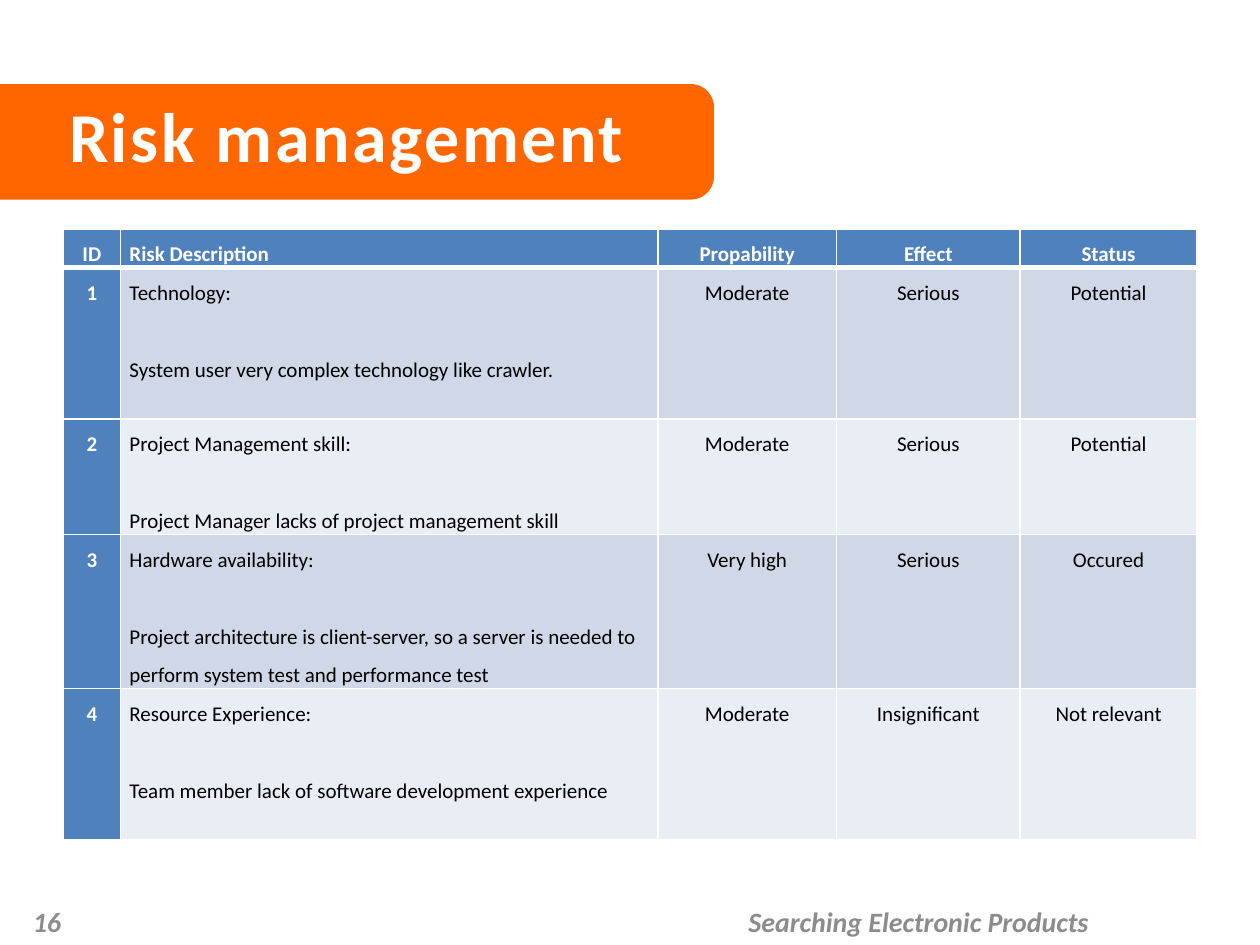
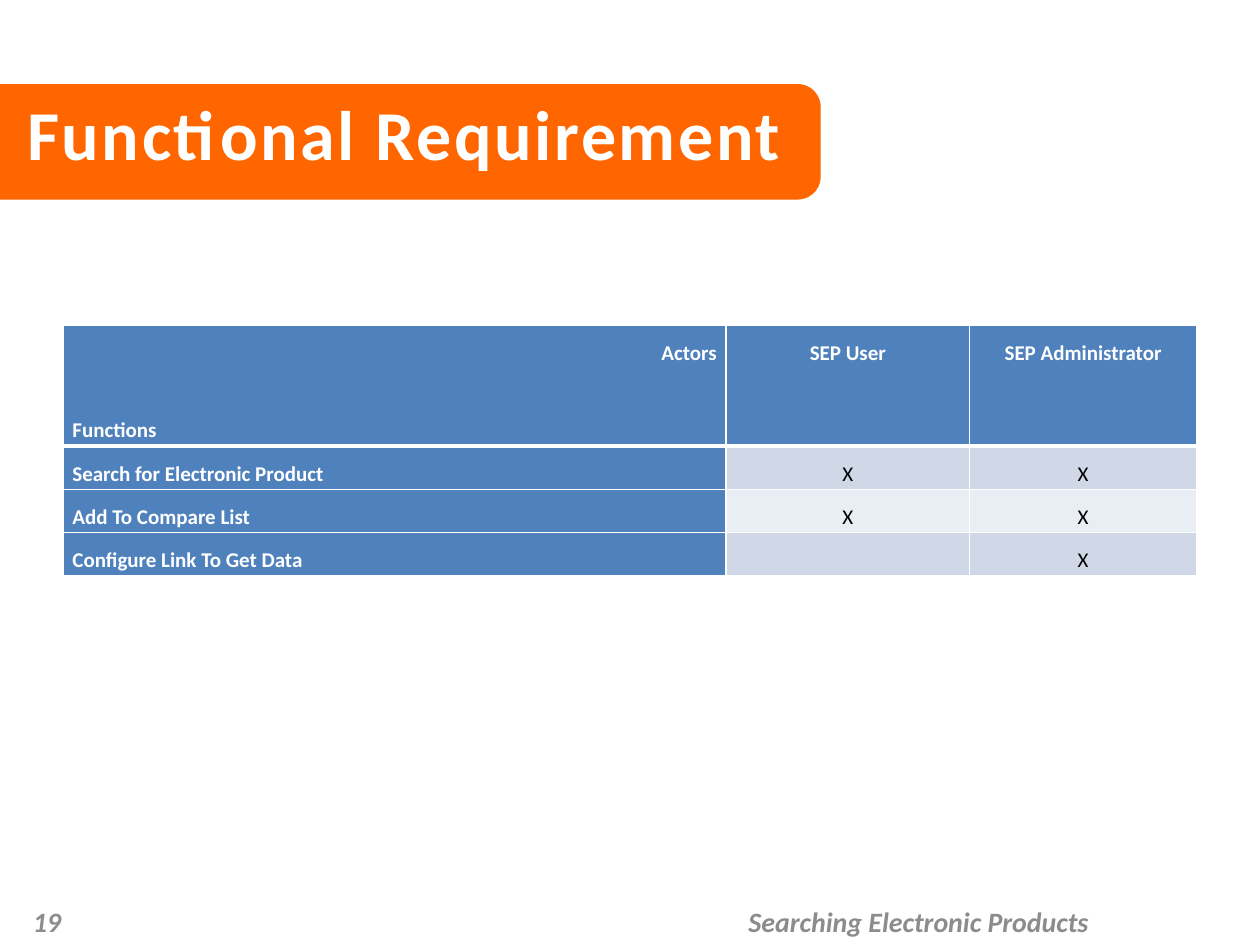
"""Builds the risk management and functional requirement slides."""
from dataclasses import dataclass

from lxml import etree
from pptx import Presentation
from pptx.dml.color import RGBColor
from pptx.enum.shapes import MSO_SHAPE
from pptx.enum.text import MSO_ANCHOR, MSO_AUTO_SIZE, PP_ALIGN
from pptx.oxml.ns import qn
from pptx.util import Pt

LEFT, CENTER, RIGHT = PP_ALIGN.LEFT, PP_ALIGN.CENTER, PP_ALIGN.RIGHT
TOP, MIDDLE = MSO_ANCHOR.TOP, MSO_ANCHOR.MIDDLE
NO_AUTOFIT = MSO_AUTO_SIZE.NONE
BAND_SHAPE = MSO_SHAPE.ROUND_2_SAME_RECTANGLE
TITLE_ONLY = 5


@dataclass(frozen=True)
class Theme:
    font: str = "Calibri"
    band: str = "FF6600"
    header: str = "4F81BD"
    stripes: tuple = ("D0D8E8", "E9EDF4")
    light: str = "FFFFFF"
    dark: str = "000000"
    footer: str = "8C8C8C"
    title_size: int = 40
    footer_size: int = 16
    table_size: int = 12
    line_spacing: float = 1.5
    line_gap: int = 22
    rule: int = 1
    header_rule: int = 3


THEME = Theme()
PROJECT = "Searching Electronic Products"
SLIDE_SIZE = (720, 540)
BAND_TOP, BAND_HEIGHT = 48, 66
TITLE_SIZE = (612, 64)
PROJECT_BOX = (411, 512, 228, 29)
NUMBER_BOX = (-126, 512, 168, 29)
TABLE_LEFT = 36

SLIDES = [
    {
        "number": "16",
        "title": "Risk management",
        "title_at": (-108, 49),
        "band_width": 408,
        "table_top": 131,
        "columns": (33, 307, 102, 105, 101),
        "heights": (22, 86.4, 66, 88, 86.4),
        "insets": (5, 0),
        "aligns": (CENTER, LEFT, CENTER, CENTER, CENTER),
        "line_aligns": {},
        "rows": [
            ("ID", "Risk Description", "Propability", "Effect", "Status"),
            ("1", "Technology:\nSystem user very complex technology like crawler.",
             "Moderate", "Serious", "Potential"),
            ("2", "Project Management skill:\nProject Manager lacks of project management skill",
             "Moderate", "Serious", "Potential"),
            ("3", "Hardware availability:\nProject architecture is client-server, so a server "
             "is needed to perform system test and performance test",
             "Very high", "Serious", "Occured"),
            ("4", "Resource Experience:\nTeam member lack of software development experience",
             "Moderate", "Insignificant", "Not relevant"),
        ],
    },
    {
        "number": "19",
        "title": "Functional Requirement",
        "title_at": (-75, 48),
        "band_width": 469,
        "table_top": 186,
        "columns": (379, 139, 130),
        "heights": (68.8, 24.8, 24.8, 24.8),
        "insets": (5.4, 1.4),
        "aligns": (LEFT, CENTER, CENTER),
        "line_aligns": {"Actors": RIGHT},
        "rows": [
            ("Actors\nFunctions", "SEP User", "SEP Administrator"),
            ("Search for Electronic Product", "X", "X"),
            ("Add To Compare List", "X", "X"),
            ("Configure Link To Get Data", "", "X"),
        ],
    },
]


def points(*lengths):
    return [Pt(length) for length in lengths]


def style(paragraph, size, color, align, bold=True, italic=False):
    paragraph.alignment = align
    for run in paragraph.runs:
        font = run.font
        font.name, font.size = THEME.font, Pt(size)
        font.bold, font.italic = bold, italic
        font.color.rgb = RGBColor.from_string(color)


def add_footer(slide, text, box, align):
    frame = slide.shapes.add_textbox(*points(*box)).text_frame
    frame.word_wrap = True
    frame.vertical_anchor = MIDDLE
    frame.text = text
    style(frame.paragraphs[0], THEME.footer_size, THEME.footer, align, italic=True)


def add_title(slide, content):
    """Place the title on a band that runs in from the left edge."""
    width = content["band_width"]
    left = (width - BAND_HEIGHT) / 2
    top = BAND_TOP + (BAND_HEIGHT - width) / 2
    band = slide.shapes.add_shape(BAND_SHAPE, *points(left, top, BAND_HEIGHT, width))
    band.rotation = 270
    band.adjustments[0], band.adjustments[1] = 0, 0.2
    band.shadow.inherit = False
    band.fill.solid()
    band.fill.fore_color.rgb = RGBColor.from_string(THEME.band)
    band.line.fill.background()

    title = slide.shapes.title
    title.element.addprevious(band.element)
    title.left, title.top, title.width, title.height = points(*content["title_at"], *TITLE_SIZE)
    frame = title.text_frame
    frame.text = content["title"]
    frame.auto_size = NO_AUTOFIT
    frame.vertical_anchor = TOP
    heading = frame.paragraphs[0]
    style(heading, THEME.title_size, THEME.light, CENTER)
    heading.runs[0].font._element.set("spc", "150")


def add_borders(cell, row):
    properties = cell._tc.get_or_add_tcPr()
    widths = {
        "a:lnL": THEME.rule,
        "a:lnR": THEME.rule,
        "a:lnT": THEME.header_rule if row == 1 else THEME.rule,
        "a:lnB": THEME.header_rule if row == 0 else THEME.rule,
    }
    for side, width in widths.items():
        border = etree.SubElement(properties, qn(side), w=str(Pt(width)))
        fill = etree.SubElement(border, qn("a:solidFill"))
        etree.SubElement(fill, qn("a:srgbClr"), val=THEME.light)


def fill_cell(cell, text, row, column, content):
    is_heading = row == 0 or column == 0
    add_borders(cell, row)
    cell.fill.solid()
    fill = THEME.header if is_heading else THEME.stripes[(row - 1) % 2]
    cell.fill.fore_color.rgb = RGBColor.from_string(fill)
    side, edge = points(*content["insets"])
    cell.margin_left = cell.margin_right = side
    cell.margin_top = cell.margin_bottom = edge
    if not text:
        return
    cell.text_frame.text = text
    color = THEME.light if is_heading else THEME.dark
    for index, line in enumerate(cell.text_frame.paragraphs):
        line.line_spacing = THEME.line_spacing
        if index:
            line.space_before = Pt(THEME.line_gap)
        align = content["line_aligns"].get(line.text, content["aligns"][column])
        style(line, THEME.table_size, color, align, bold=is_heading)


def add_grid(slide, content):
    rows, columns, heights = content["rows"], content["columns"], content["heights"]
    box = points(TABLE_LEFT, content["table_top"], sum(columns), sum(heights))
    grid = slide.shapes.add_table(len(rows), len(columns), *box).table
    for column, width in zip(grid.columns, columns):
        column.width = Pt(width)
    for row, height in zip(grid.rows, heights):
        row.height = Pt(height)
    for r, texts in enumerate(rows):
        for c, text in enumerate(texts):
            fill_cell(grid.cell(r, c), text, r, c, content)


def main():
    deck = Presentation()
    deck.slide_width, deck.slide_height = points(*SLIDE_SIZE)
    for content in SLIDES:
        slide = deck.slides.add_slide(deck.slide_layouts[TITLE_ONLY])
        add_footer(slide, PROJECT, PROJECT_BOX, CENTER)
        add_footer(slide, content["number"], NUMBER_BOX, RIGHT)
        add_title(slide, content)
        add_grid(slide, content)
    deck.save("out.pptx")


if __name__ == "__main__":
    main()
